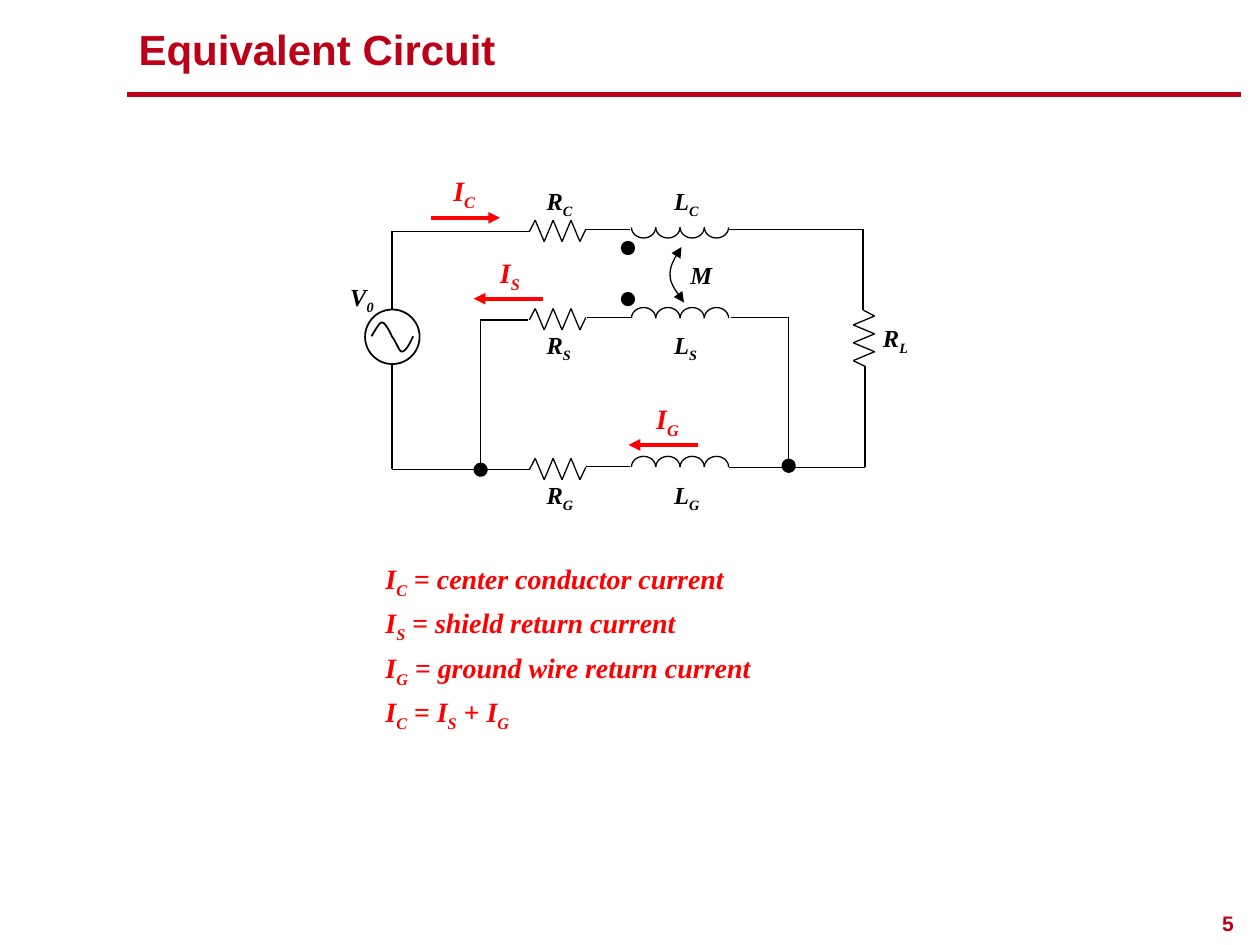
from lxml.etree import SubElement
from pptx import Presentation
from pptx.dml.color import RGBColor
from pptx.enum.shapes import MSO_CONNECTOR, MSO_SHAPE
from pptx.enum.text import MSO_ANCHOR, MSO_AUTO_SIZE, PP_ALIGN
from pptx.oxml.ns import qn
from pptx.util import Cm, Pt

COLORS = {"brand": "BB0018", "current": "FF0000", "ink": "000000", "paper": "FFFFFF"}
SERIF = "Times New Roman"

presentation = Presentation()
presentation.slide_width = Cm(25.4)
presentation.slide_height = Cm(19.05)
slide = presentation.slides.add_slide(presentation.slide_layouts[5])
shapes = slide.shapes


def add_line(start, end, color="ink", width=0.75, arrow=False):
    line = shapes.add_connector(
        MSO_CONNECTOR.STRAIGHT, *(Cm(value) for value in (*start, *end)))
    line.line.color.rgb = RGBColor.from_string(COLORS[color])
    line.line.width = Pt(width)
    if arrow:
        SubElement(line.line._get_or_add_ln(), qn("a:tailEnd"), type="triangle")
    SubElement(line._element.spPr, qn("a:effectLst"))


def add_label(text, left, top, width, size=14, color="ink"):
    box = shapes.add_textbox(Cm(left), Cm(top), Cm(width), Cm(0.86 if size == 14 else 0.94))
    box.text_frame.word_wrap = False
    paragraph = box.text_frame.paragraphs[0]
    first, *rest = text.split("_")
    pieces = [(first, False)]
    for part in rest:
        pieces += [(part[0], True), (part[1:], False)]
    for piece, subscript in pieces:
        if not piece:
            continue
        run = paragraph.add_run()
        run.text = piece
        run.font.name = SERIF
        run.font.size = Pt(size)
        run.font.bold = run.font.italic = True
        run.font.color.rgb = RGBColor.from_string(COLORS[color])
        if subscript:
            run._r.get_or_add_rPr().set("baseline", "-25000")


title = shapes.title
title.left, title.top, title.width, title.height = Cm(2.54), Cm(0.43), Cm(20.14), Cm(1.12)
title.text_frame.text = "Equivalent Circuit"
title.text_frame.vertical_anchor = MSO_ANCHOR.MIDDLE
title.text_frame.auto_size = MSO_AUTO_SIZE.NONE
number = shapes.add_textbox(Cm(24.08), Cm(18.29), Cm(1.04), Cm(0.71))
number.text_frame.text = "5"
number.text_frame.word_wrap = False
number.text_frame.paragraphs[0].line_spacing = 0.9
for shape, size, alignment in [(title, 24, PP_ALIGN.LEFT), (number, 12, PP_ALIGN.RIGHT)]:
    paragraph = shape.text_frame.paragraphs[0]
    paragraph.alignment = alignment
    font = paragraph.runs[0].font
    font.name = "Arial"
    font.size = Pt(size)
    font.bold = True
    font.color.rgb = RGBColor.from_string(COLORS["brand"])
add_line((2.57, 1.91), (25.02, 1.91), "brand", 3)

zigzag = [(0, 0)]
zigzag += [(0.12 + 0.18 * i, 0.2 if i % 2 else -0.23) for i in range(6)]
zigzag += [(1.14, -0.05)]
resistors = [[(10.67 + along, top + across) for along, across in zigzag]
             for top in (4.67, 6.45, 9.47)]
resistors.append([(17.4 - across, 6.25 + along) for along, across in zigzag])
for points in resistors:
    for start, end in zip(points, points[1:]):
        add_line(start, end)

wires = [
    ((11.81, 4.62), (12.7, 4.62)),
    ((11.84, 6.4), (12.73, 6.4)),
    ((11.81, 9.41), (12.7, 9.41)),
    ((10.67, 4.67), (7.9, 4.67)),
    ((7.9, 4.66), (7.9, 9.45)),
    ((10.67, 9.47), (7.9, 9.47)),
    ((10.64, 6.45), (9.68, 6.45)),
    ((9.68, 6.45), (9.68, 9.43)),
    ((14.69, 4.62), (17.4, 4.62)),
    ((14.7, 9.42), (17.43, 9.42)),
    ((17.4, 4.62), (17.4, 6.25)),
    ((17.44, 7.39), (17.44, 9.42)),
    ((14.73, 6.4), (15.9, 6.4)),
    ((15.9, 6.4), (15.9, 9.5)),
]
for start, end in wires:
    add_line(start, end)

outlines = []
for top, hangs in [(4.37, True), (6.2, False), (9.2, False)]:
    for turn in range(4):
        for mirrored in (False, True):
            arc = shapes.add_shape(
                MSO_SHAPE.ARC, Cm(12.73 + 0.49 * turn), Cm(top), Cm(0.49), Cm(0.43))
            transform = arc._element.spPr.find(qn("a:xfrm"))
            if mirrored:
                transform.set("flipH", "1")
            if hangs:
                transform.set("flipV", "1")
            outlines.append((arc, None, 0.75))

circles = [
    (7.36, 6.24, 1.1, "paper", 1),
    (15.81, 9.3, 0.18, "ink", 3),
    (9.6, 9.38, 0.18, "ink", 3),
    (12.57, 4.91, 0.18, "ink", 3),
    (12.57, 5.94, 0.18, "ink", 3),
]
for left, top, size, fill, width in circles:
    circle = shapes.add_shape(MSO_SHAPE.OVAL, Cm(left), Cm(top), Cm(size), Cm(size))
    outlines.append((circle, fill, width))

sine = [(7.49, 6.78), (7.57, 6.65), (7.65, 6.5), (7.7, 6.5), (7.77, 6.5), (7.87, 6.71),
        (7.9, 6.78), (7.98, 6.88), (8.05, 7.09), (8.1, 7.09), (8.18, 7.09), (8.26, 6.93),
        (8.33, 6.78)]
coupling = [(13.79, 6.1), (13.67, 5.92), (13.51, 5.74), (13.51, 5.56), (13.49, 5.38),
            (13.61, 5.18), (13.74, 4.98)]
STEPS = 12
for controls, fill, width in [(sine, "paper", 1), (coupling, None, 0.75)]:
    builder = shapes.build_freeform(*(Cm(value) for value in controls[0]))
    points = []
    for first in range(0, len(controls) - 1, 3):
        for step in range(1, STEPS + 1):
            t = step / STEPS
            weights = ((1 - t) ** 3, 3 * t * (1 - t) ** 2, 3 * t ** 2 * (1 - t), t ** 3)
            segment = controls[first:first + 4]
            points.append(tuple(
                Cm(sum(weight * point[axis] for weight, point in zip(weights, segment)))
                for axis in (0, 1)))
    builder.add_line_segments(points, close=False)
    curve = builder.convert_to_shape()
    outlines.append((curve, fill, width))

for shape, fill, width in outlines:
    shape.shadow.inherit = False
    if fill:
        shape.fill.solid()
        shape.fill.fore_color.rgb = RGBColor.from_string(COLORS[fill])
    else:
        shape.fill.background()
    shape.line.color.rgb = RGBColor.from_string(COLORS["ink"])
    shape.line.width = Pt(width)
for end in ("a:headEnd", "a:tailEnd"):
    SubElement(curve.line._get_or_add_ln(), qn(end), type="triangle")

for conductor, top in [("C", 3.63), ("S", 6.53), ("G", 9.55)]:
    add_label(f"R_{conductor}", 10.77, top, 1.07)
    add_label(f"L_{conductor}", 13.34, top, 1.05)
add_label("R_L", 17.55, 6.38, 1.04)
add_label("M", 13.67, 5.11, 0.97)
add_label("V_0", 6.81, 5.56, 1.02)

currents = [
    ("I_C", 8.89, 3.38, 0.99, (8.69, 4.39), (10.08, 4.39)),
    ("I_S", 9.83, 5.03, 0.94, (10.95, 6.02), (9.55, 6.02)),
    ("I_G", 12.98, 7.98, 1.02, (14.07, 8.97), (12.67, 8.97)),
]
for text, left, top, width, start, end in currents:
    add_line(start, end, "current", 2.25, arrow=True)
    add_label(text, left, top, width, 16, "current")

definitions = [
    ("I_C = center conductor current", 7.47),
    ("I_S = shield return current", 6.48),
    ("I_G = ground wire return current", 8),
    ("I_C = I_S + I_G", 3.15),
]
for row, (text, width) in enumerate(definitions):
    add_label(text, 7.52, 11.2 + 0.89 * row, width, 16, "current")

presentation.save("out.pptx")
